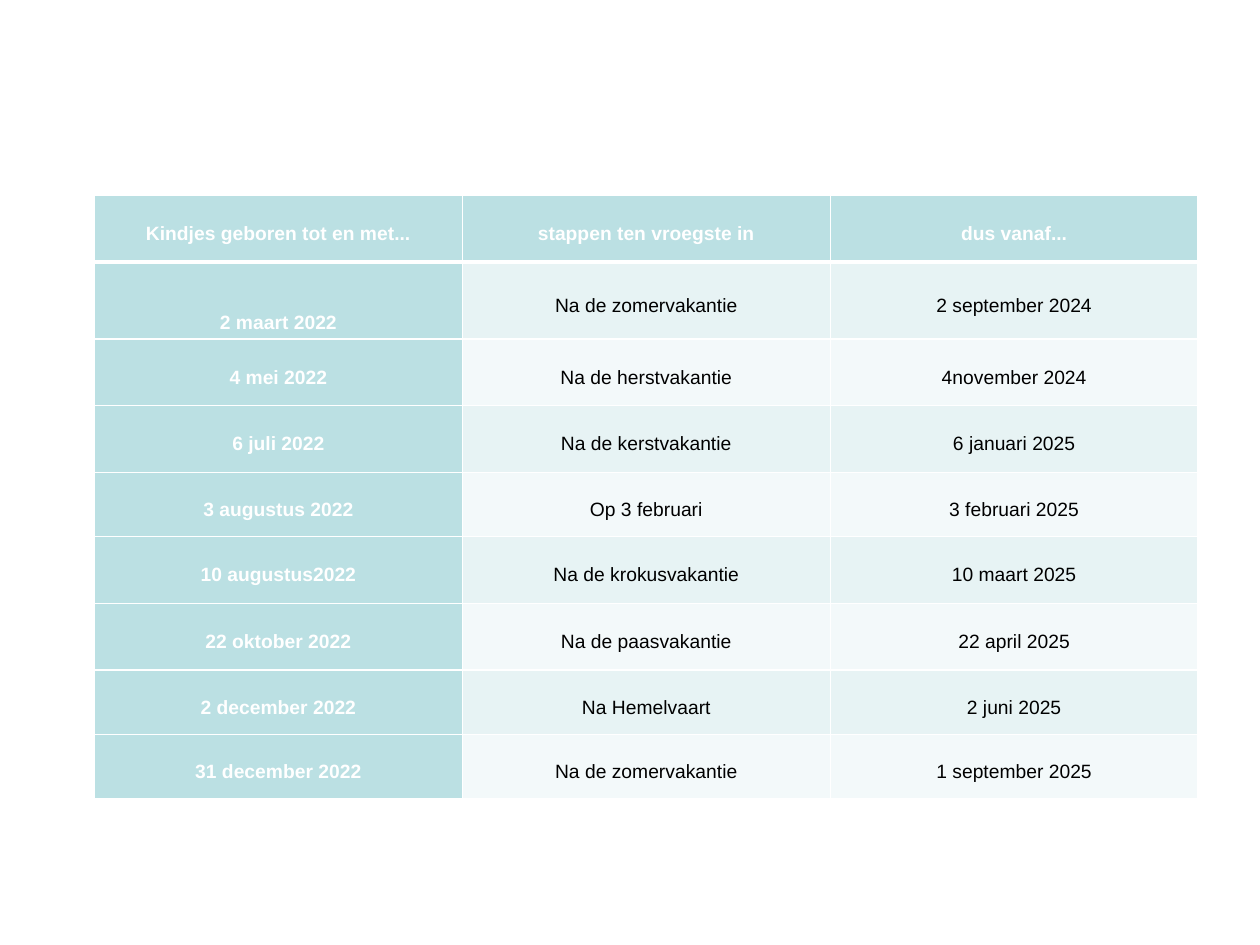
from dataclasses import dataclass

from lxml import etree
from pptx import Presentation
from pptx.dml.color import RGBColor
from pptx.enum import text
from pptx.oxml import ns
from pptx.util import Inches, Pt


@dataclass(frozen=True)
class Theme:
    font: str = "Arial"
    size: float = 11
    line_spacing: float = 18
    white: str = "FFFFFF"
    black: str = "000000"
    accent: str = "BBE0E3"
    band_dark: str = "E7F3F4"
    band_light: str = "F3F9FA"
    border: float = 1
    header_border: float = 3


THEME = Theme()

ROWS = [
    ("Kindjes geboren tot en met...", "stappen ten vroegste in", "dus vanaf..."),
    ("2 maart 2022", "Na de zomervakantie", "2 september 2024"),
    ("4 mei 2022", "Na de herstvakantie", "4november 2024"),
    ("6 juli 2022", "Na de kerstvakantie", "6 januari 2025"),
    ("3 augustus 2022", "Op 3 februari", "3 februari 2025"),
    ("10 augustus2022", "Na de krokusvakantie", "10 maart 2025"),
    ("22 oktober 2022", "Na de paasvakantie", "22 april 2025"),
    ("2 december 2022", "Na Hemelvaart", "2 juni 2025"),
    ("31 december 2022", "Na de zomervakantie", "1 september 2025"),
]
ROW_HEIGHTS = [0.53, 0.61, 0.53, 0.53, 0.51, 0.53, 0.53, 0.51, 0.51]
COLUMN_WIDTH = 2.92


def add_border(cell, side, width):
    """Draw one white edge; side is L, R, T or B. Call before filling the cell."""
    tc_pr = cell._tc.get_or_add_tcPr()
    ln = etree.SubElement(tc_pr, ns.qn(f"a:ln{side}"), w=str(Pt(width)))
    fill = etree.SubElement(ln, ns.qn("a:solidFill"))
    etree.SubElement(fill, ns.qn("a:srgbClr"), val=THEME.white)


prs = Presentation()
prs.slide_width, prs.slide_height = Inches(10), Inches(7.5)
s = prs.slides.add_slide(prs.slide_layouts[6])

frame = s.shapes.add_table(
    len(ROWS), len(ROWS[0]), Inches(0.75), Inches(1.55),
    Inches(COLUMN_WIDTH * len(ROWS[0])), Inches(sum(ROW_HEIGHTS)))
table = frame.table
table.first_row = table.horz_banding = False
for column in table.columns:
    column.width = Inches(COLUMN_WIDTH)

for i, (row, height) in enumerate(zip(ROWS, ROW_HEIGHTS)):
    table.rows[i].height = Inches(height)
    for j, wording in enumerate(row):
        cell = table.cell(i, j)
        is_heading = i == 0 or j == 0

        for side in "LRTB":
            under_header = (i, side) in ((0, "B"), (1, "T"))
            add_border(cell, side, THEME.header_border if under_header else THEME.border)
        band = THEME.band_dark if i % 2 else THEME.band_light
        cell.fill.solid()
        cell.fill.fore_color.rgb = RGBColor.from_string(THEME.accent if is_heading else band)

        cell.margin_left = cell.margin_right = Inches(0.01)
        cell.margin_top = cell.margin_bottom = Inches(0.01)
        cell.vertical_anchor = text.MSO_ANCHOR.MIDDLE
        p = cell.text_frame.paragraphs[0]
        p.alignment = text.PP_ALIGN.CENTER
        p.line_spacing = Pt(THEME.line_spacing)
        r = p.add_run()
        r.text = wording
        r.font.name, r.font.size = THEME.font, Pt(THEME.size)
        r.font.bold = is_heading
        r.font.color.rgb = RGBColor.from_string(THEME.white if is_heading else THEME.black)

# The first date sits low in its taller row.
first_date = table.cell(1, 0)
first_date.vertical_anchor = text.MSO_ANCHOR.BOTTOM
first_date.margin_bottom = Inches(0.04)

prs.save("out.pptx")
